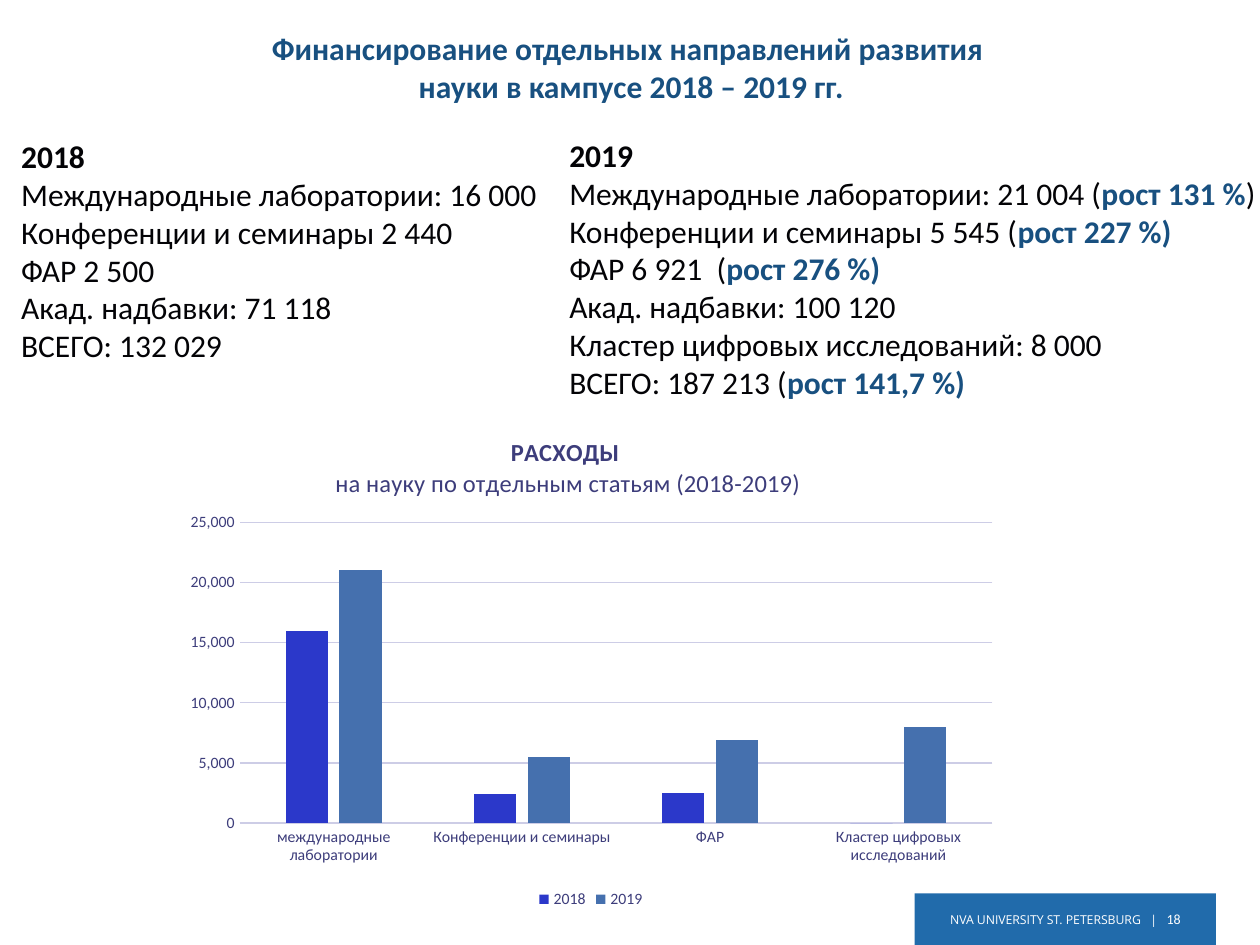
from lxml import etree
from pptx import Presentation
from pptx.chart.data import CategoryChartData
from pptx.dml.color import RGBColor
from pptx.enum.chart import XL_CHART_TYPE, XL_LEGEND_POSITION, XL_TICK_MARK
from pptx.enum.shapes import MSO_SHAPE
from pptx.enum.text import MSO_ANCHOR, PP_ALIGN
from pptx.oxml.ns import qn
from pptx.util import Inches, Pt

COLUMNS = XL_CHART_TYPE.COLUMN_CLUSTERED
LEGEND_BOTTOM = XL_LEGEND_POSITION.BOTTOM
NO_TICKS = XL_TICK_MARK.NONE
RECTANGLE = MSO_SHAPE.RECTANGLE
TOP, MIDDLE = MSO_ANCHOR.TOP, MSO_ANCHOR.MIDDLE
LEFT, CENTER, RIGHT = PP_ALIGN.LEFT, PP_ALIGN.CENTER, PP_ALIGN.RIGHT

COLORS = {
    "accent": "185080",
    "text": "030306",
    "footer": "216BAB",
    "white": "FFFFFF",
    "chart_text": "3D3D7B",
    "grid": "CDCDE6",
    "2018": "2B38CA",
    "2019": "4570AE",
}

TITLE = [
    "Финансирование отдельных направлений развития ",
    "науки в кампусе 2018 – 2019 гг.",
]
# Each line is a plain part and, where there is one, a highlighted part and an ending
FUNDING_2018 = [
    ("Международные лаборатории: 16 000",),
    ("Конференции и семинары 2 440",),
    ("ФАР 2 500",),
    ("Акад. надбавки: 71 118",),
    ("ВСЕГО: 132 029",),
]
FUNDING_2019 = [
    ("Международные лаборатории: 21 004 (", "рост 131 %", ")"),
    ("Конференции и семинары 5 545 (", "рост 227 %)"),
    ("ФАР 6 921  (", "рост 276 %)"),
    ("Акад. надбавки: 100 120",),
    ("Кластер цифровых исследований: 8 000",),
    ("ВСЕГО: 187 213 (", "рост 141,7 %)"),
]
CATEGORIES = ["международные лаборатории", "Конференции и семинары",
              "ФАР", "Кластер цифровых исследований"]
EXPENSES = {
    "2018": (16000, 2400, 2500, 0),
    "2019": (21000, 5500, 6900, 8000),
}


def color(name):
    return RGBColor.from_string(COLORS[name])


def format_font(font, size, color_name, bold=False, name="Calibri"):
    font.size = Pt(size)
    font.name = name
    font.bold = bold
    font.color.rgb = color(color_name)


def run(text, size=18, color_name="text", bold=False, name="Calibri"):
    """Describe a piece of text as its wording and its font format."""
    return text, dict(size=size, color_name=color_name, bold=bold, name=name)


def fill_paragraph(paragraph, runs, align=LEFT, line_spacing=None):
    paragraph.alignment = align
    paragraph.line_spacing = line_spacing
    for text, font_format in runs:
        text_run = paragraph.add_run()
        text_run.text = text
        format_font(text_run.font, **font_format)


def fill_text(frame, paragraphs, **paragraph_format):
    for index, runs in enumerate(paragraphs):
        paragraph = frame.add_paragraph() if index else frame.paragraphs[0]
        fill_paragraph(paragraph, runs, **paragraph_format)


def place_manually(element, x, y, width=None, height=None):
    """Fix a chart title or plot area, in fractions of the chart."""
    for old_layout in element.findall(qn("c:layout")):
        element.remove(old_layout)
    layout = etree.Element(qn("c:layout"))
    manual = etree.SubElement(layout, qn("c:manualLayout"))
    settings = [("xMode", "edge"), ("yMode", "edge"), ("x", x), ("y", y)]
    if width:
        settings = [("layoutTarget", "inner"), *settings, ("w", width), ("h", height)]
    for tag, value in settings:
        etree.SubElement(manual, qn(f"c:{tag}")).set("val", str(value))
    title_text = element.find(qn("c:tx"))
    if title_text is None:
        element.insert(0, layout)
    else:
        title_text.addnext(layout)


class SlideBuilder:
    def __init__(self, presentation):
        self.slide = presentation.slides.add_slide(presentation.slide_layouts[6])

    def rectangle(self, left, top, width, height, fill):
        shape = self.slide.shapes.add_shape(
            RECTANGLE, Inches(left), Inches(top), Inches(width), Inches(height))
        shape.shadow.inherit = False
        shape.fill.solid()
        shape.fill.fore_color.rgb = color(fill)
        shape.line.fill.background()

    def text(self, left, top, width, height, paragraphs, anchor=TOP, wrap=True,
             **paragraph_format):
        box = self.slide.shapes.add_textbox(
            Inches(left), Inches(top), Inches(width), Inches(height))
        box.text_frame.word_wrap = wrap
        box.text_frame.vertical_anchor = anchor
        fill_text(box.text_frame, paragraphs, **paragraph_format)

    def funding(self, left, top, width, height, year, lines):
        paragraphs = [[run(year, bold=True)]]
        for parts in lines:
            paragraphs.append([
                run(part, color_name="accent", bold=True) if index == 1 else run(part)
                for index, part in enumerate(parts)])
        self.text(left, top, width, height, paragraphs)

    def column_chart(self, left, top, width, height, title, categories, series_values):
        data = CategoryChartData(number_format="#,##0")
        data.categories = categories
        for name, values in series_values.items():
            data.add_series(name, values)
        chart = self.slide.shapes.add_chart(
            COLUMNS, Inches(left), Inches(top), Inches(width), Inches(height), data).chart
        format_font(chart.font, 10, "text")

        fill_text(chart.chart_title.text_frame, title, align=CENTER)
        chart.chart_title.include_in_layout = False
        place_manually(chart.chart_title._element, 0.19, 0.04)
        place_manually(chart._chartSpace.chart.plotArea, 0.08, 0.22, 0.9, 0.6)

        plot = chart.plots[0]
        plot.gap_width = 219
        plot.overlap = -27
        plot.vary_by_categories = False
        for series in plot.series:
            series.format.fill.solid()
            series.format.fill.fore_color.rgb = color(series.name)

        category_axis, value_axis = chart.category_axis, chart.value_axis
        for axis in (category_axis, value_axis):
            axis.major_tick_mark = axis.minor_tick_mark = NO_TICKS
            format_font(axis.tick_labels.font, 9, "chart_text")
        value_axis.minimum_scale = 0
        value_axis.maximum_scale = 25000
        value_axis.major_unit = 5000
        value_axis.tick_labels.number_format = "#,##0"
        value_axis.tick_labels.number_format_is_linked = False
        value_axis.format.line.fill.background()
        for line in (category_axis.format.line, value_axis.major_gridlines.format.line):
            line.color.rgb = color("grid")
            line.width = Pt(0.75)

        chart.has_legend = True
        chart.legend.position = LEGEND_BOTTOM
        chart.legend.include_in_layout = False
        format_font(chart.legend.font, 9, "chart_text")


def main():
    presentation = Presentation()
    presentation.slide_width = Inches(10)
    presentation.slide_height = Inches(7.5)
    builder = SlideBuilder(presentation)

    builder.rectangle(7.26, 7.09, 2.39, 0.42, "footer")
    footer = [run("NVA UNIVERSITY ST. PETERSBURG   |   ", 7, "white", name="Open Sans"),
              run("18", 8, "white")]
    builder.text(7.25, 7.21, 2.22, 0.2, [footer], anchor=MIDDLE, wrap=False,
                 align=RIGHT, line_spacing=0.7)

    title = [[run(line, color_name="accent", bold=True)] for line in TITLE]
    builder.text(0.02, 0.18, 9.98, 0.71, title, align=CENTER)

    chart_title = [[run("РАСХОДЫ ", 14, "chart_text", bold=True)],
                   [run("на науку по отдельным статьям (2018-2019)", 14, "chart_text")]]
    builder.column_chart(1.37, 3.27, 6.64, 3.98, chart_title, CATEGORIES, EXPENSES)

    builder.funding(4.42, 1.03, 5.76, 2.22, "2019", FUNDING_2019)
    builder.funding(0.07, 1.04, 4.36, 1.92, "2018", FUNDING_2018)

    presentation.save("out.pptx")


if __name__ == "__main__":
    main()
